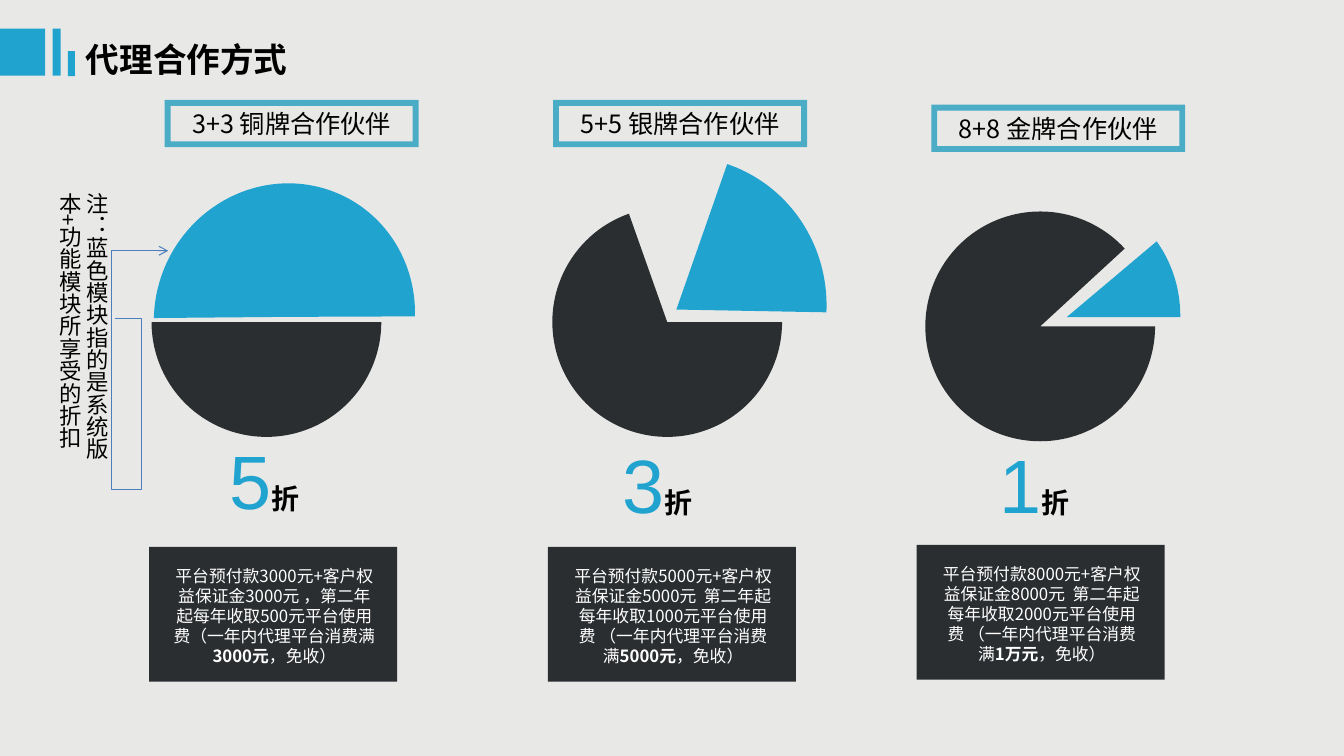
import pptx
import pptx.util
import pptx.dml.color
import pptx.enum.shapes
import pptx.enum.text
import pptx.oxml.ns
import lxml.etree
from pptx.util import Cm, Pt

SHAPE = pptx.enum.shapes.MSO_SHAPE
ALIGN = pptx.enum.text.PP_ALIGN
ANCHOR = pptx.enum.text.MSO_ANCHOR
CJK = "Noto Sans CJK SC"
BLUE, DARK, TEAL, BLACK, WHITE = "21A3D0", "2B2E30", "4BACC6", "000000", "FFFFFF"
rgb = pptx.dml.color.RGBColor.from_string
qn = pptx.oxml.ns.qn


def add_filled(kind, box, color):
    sp = s.shapes.add_shape(kind, *map(Cm, box))
    sp.shadow.inherit = False
    sp.fill.solid()
    sp.fill.fore_color.rgb = rgb(color)
    sp.line.fill.background()
    return sp


def write(sp, runs, spacing=None, align=ALIGN.LEFT, anchor=ANCHOR.TOP):
    """Fill the shape with one paragraph of (text, size, colour, bold, font) runs."""
    tf = sp.text_frame
    tf.word_wrap = True
    tf.vertical_anchor = anchor
    p = tf.paragraphs[0]
    p.alignment = align
    p.line_spacing = spacing
    for text, size, color, bold, font in runs:
        r = p.add_run()
        r.text = text
        for name, value in {"size": Pt(size), "bold": bold, "name": font}.items():
            setattr(r.font, name, value)
        r.font.color.rgb = rgb(color)
        lxml.etree.SubElement(r.font._element, qn("a:ea")).set("typeface", CJK)


prs = pptx.Presentation()
prs.slide_width, prs.slide_height = Cm(33.87), Cm(19.05)
s = prs.slides.add_slide(prs.slide_layouts[5])
s.background.fill.solid()
s.background.fill.fore_color.rgb = rgb("E8E8E6")

# Title with its three bars
for bar in [(0, 0.72, 1.14, 1.19), (1.33, 0.72, 0.2, 1.19), (1.71, 1.29, 0.18, 0.63)]:
    add_filled(SHAPE.RECTANGLE, bar, BLUE)
title = s.shapes.title
title.left, title.top, title.width, title.height = map(Cm, (1.91, 0.81, 7.37, 1.35))
write(title, [("代理合作方式", 24, BLACK, True, CJK)], anchor=ANCHOR.MIDDLE)

# Partner levels; each pie is (box, rotation, start angle, end angle, colour)
levels = [
    {
        "name": "3+3 铜牌合作伙伴", "frame": (4.15, 2.52),
        "pies": [((3.82, 5.22, 5.79, 5.79), 0, 0, 179.97, DARK),
                 ((3.78, 4.72, 6.78, 6.53), 296.5, 243, 63.27, BLUE)],
        "rate": "5", "rate_at": (5.54, 10.82), "card": (3.76, 13.78),
        "terms": "平台预付款3000元+客户权益保证金3000元 ，第二年起每年收取500元平台使用费（一年内代理平台消费满",
        "limit": "3000元",
    },
    {
        "name": "5+5 银牌合作伙伴", "frame": (13.94, 2.52),
        "pies": [((13.92, 5.22, 5.79, 5.79), 0, 0, 250.53, DARK),
                 ((13.16, 4.04, 7.77, 7.52), 296.5, 352.77, 64.56, BLUE)],
        "rate": "3", "rate_at": (15.44, 10.9), "card": (13.81, 13.78),
        "terms": "平台预付款5000元+客户权益保证金5000元  第二年起每年收取1000元平台使用费 （一年内代理平台消费满",
        "limit": "5000元",
    },
    {
        "name": "8+8 金牌合作伙伴", "frame": (23.47, 2.64),
        "pies": [((23.32, 5.33, 5.79, 5.79), 0, 0, 317.38, DARK),
                 ((23.8, 5.13, 6.17, 5.72), 273.9, 45.97, 86.04, BLUE)],
        "rate": "1", "rate_at": (24.94, 10.9), "card": (23.1, 13.73),
        "terms": "平台预付款8000元+客户权益保证金8000元  第二年起每年收取2000元平台使用费 （一年内代理平台消费满",
        "limit": "1万元",
    },
]
for level in levels:
    # Framed name
    sp = add_filled(SHAPE.FRAME, (*level["frame"], 6.4, 1.19), TEAL)
    write(sp, [(level["name"], 18, BLACK, False, CJK)], align=ALIGN.CENTER, anchor=ANCHOR.MIDDLE)

    # Pie and its pulled-out discount slice
    for box, rotation, start, end, color in level["pies"]:
        sp = add_filled(SHAPE.PIE, box, color)
        sp.rotation = rotation
        sp.adjustments[0], sp.adjustments[1] = start * 0.6, end * 0.6

    # Discount
    sp = s.shapes.add_textbox(*map(Cm, (*level["rate_at"], 5.59, 3.05)))
    write(sp, [(level["rate"], 54, BLUE, False, "Arial"), ("折", 20, BLACK, True, CJK)])

    # Terms on a dark card
    x, y = level["card"]
    add_filled(SHAPE.RECTANGLE, (x, y, 6.25, 3.4), DARK)
    sp = s.shapes.add_textbox(*map(Cm, (x + 0.36, y + 0.34, 5.59, 2.82)))
    write(sp, [(level["terms"], 12, WHITE, False, CJK),
               (level["limit"], 12, WHITE, True, CJK),
               ("，免收）", 12, WHITE, False, CJK)], Pt(14.4), ALIGN.CENTER)

# Vertical note
sp = s.shapes.add_textbox(*map(Cm, (0.36, 4.6, 2.54, 7.26)))
write(sp, [("注：蓝色模块指的是系统版本+功能模块所享受的折扣", 16, BLACK, False, "Calibri")], Pt(19.2))
sp.text_frame._txBody.bodyPr.set("vert", "eaVert")

# Five-part elbow arrow from the note to the blue slice
arrow = s.shapes.add_connector(pptx.enum.shapes.MSO_CONNECTOR.ELBOW, Cm(2.9), Cm(8.03), Cm(4.24), Cm(6.32))
arrow.line.color.rgb = rgb("4B7EBC")
arrow.line.width = Pt(0.75)
spPr = arrow._element.spPr
geom = spPr.find(qn("a:prstGeom"))
geom.set("prst", "bentConnector5")
guides = geom.find(qn("a:avLst"))
for i, value in enumerate([49200, -251800, -6300], 1):
    gd = lxml.etree.SubElement(guides, qn("a:gd"))
    gd.set("name", f"adj{i}")
    gd.set("fmla", f"val {value}")
lxml.etree.SubElement(spPr.find(qn("a:ln")), qn("a:tailEnd")).set("type", "arrow")
lxml.etree.SubElement(spPr, qn("a:effectLst"))

prs.save("out.pptx")
